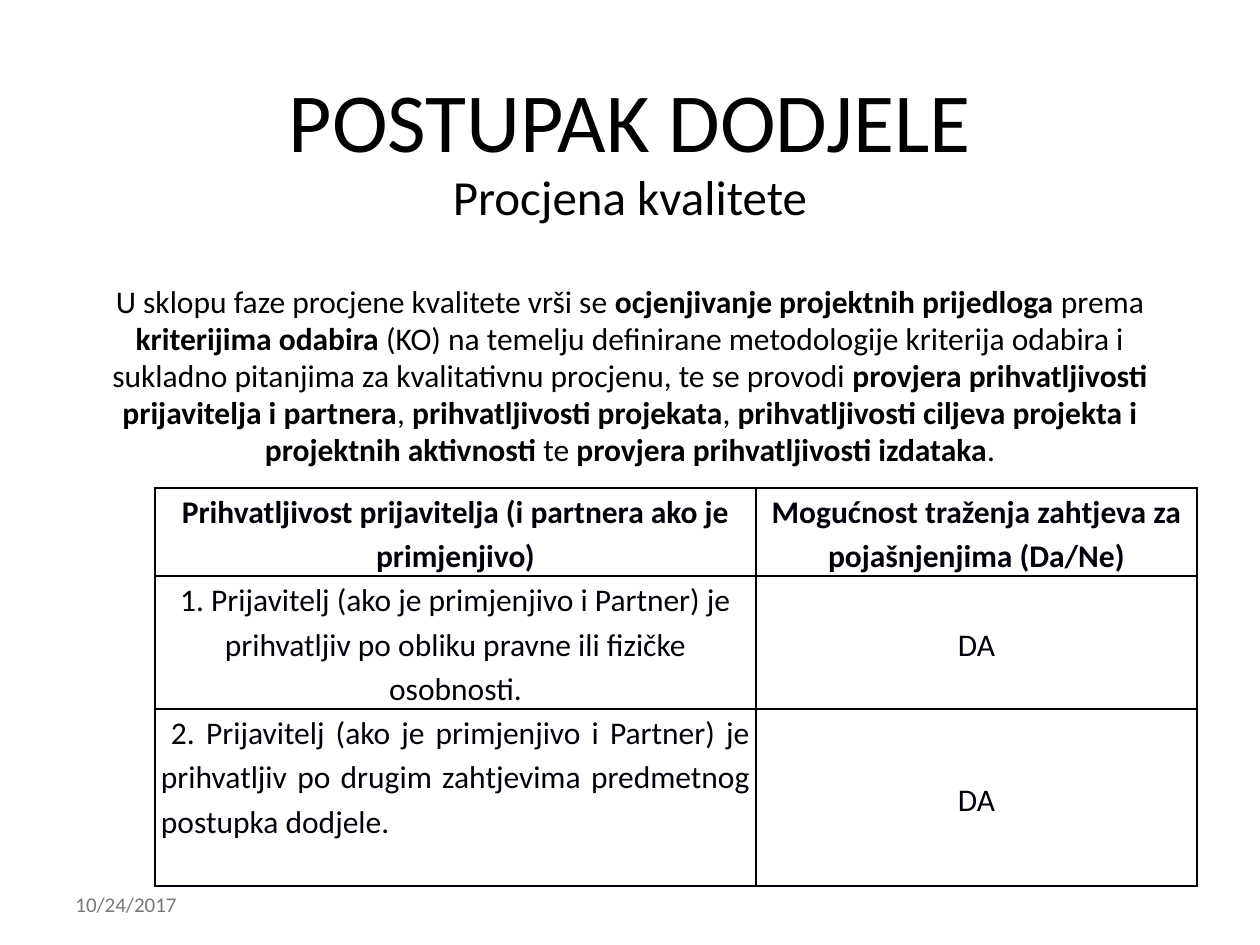
from lxml import etree
from pptx import Presentation
from pptx.dml.color import RGBColor
from pptx.enum import text
from pptx.oxml import ns
from pptx.util import Pt

SCALE = 914400 / 126
MID = text.MSO_ANCHOR.MIDDLE
TOP = text.MSO_ANCHOR.TOP
LEFT, CENTER, JUST = text.PP_ALIGN.LEFT, text.PP_ALIGN.CENTER, text.PP_ALIGN.JUSTIFY


def px(n):
    return round(n * SCALE)


def color(code):
    return RGBColor.from_string(code)


class Deck:
    font = "Calibri"
    ink = "000000"
    grid = "00000A"

    def __init__(self, wide, high):
        self.prs = Presentation()
        self.prs.slide_width, self.prs.slide_height = px(wide), px(high)
        self.slide = self.prs.slides.add_slide(self.prs.slide_layouts[6])

    def words(self, para, parts, size, tint, align, lead=None):
        """Fill a paragraph; every second part is bold."""
        para.alignment = align
        para.line_spacing = lead
        for i, part in enumerate(parts):
            if not part:
                continue
            run = para.add_run()
            run.text = part
            run.font.name, run.font.size = self.font, Pt(size)
            run.font.bold = i % 2 == 1
            run.font.color.rgb = color(tint)

    def label(self, box, parts, size, tint=ink, align=CENTER, anchor=TOP, lead=None):
        frame = self.slide.shapes.add_textbox(*map(px, box)).text_frame
        frame.word_wrap = True
        frame.margin_top = frame.margin_bottom = 0
        frame.vertical_anchor = anchor
        self.words(frame.paragraphs[0], parts, size, tint, align, lead)

    def border(self, cell):
        props = cell._tc.get_or_add_tcPr()
        for i, side in enumerate(("lnL", "lnR", "lnT", "lnB")):
            line = etree.Element(ns.qn("a:" + side), w=str(Pt(1)))
            fill = etree.SubElement(line, ns.qn("a:solidFill"))
            etree.SubElement(fill, ns.qn("a:srgbClr"), val=self.grid)
            props.insert(i, line)

    def table(self, left, top, cols, rows, data):
        grid = self.slide.shapes.add_table(
            len(rows), len(cols), px(left), px(top), px(sum(cols)), px(sum(rows))).table
        for col, wide in zip(grid.columns, cols):
            col.width = px(wide)
        for row, high, line in zip(grid.rows, rows, data):
            row.height = px(high)
            for cell, (parts, align, anchor) in zip(row.cells, line):
                cell.margin_left = cell.margin_right = px(6)
                cell.margin_top = cell.margin_bottom = 0
                cell.vertical_anchor = anchor
                cell.fill.solid()
                cell.fill.fore_color.rgb = color("FFFFFF")
                self.border(cell)
                para = cell.text_frame.paragraphs[0]
                if align == JUST:
                    para._p.get_or_add_pPr().set("indent", str(px(10)))
                self.words(para, parts, 18, self.grid, align, 1.15)


def main():
    deck = Deck(1260, 945)

    # Date
    deck.label((63, 879, 294, 50), ["10/24/2017"], 12, "777877", LEFT, MID)

    # Headings
    deck.label((63, 69, 1134, 102), ["POSTUPAK DODJELE"], 48)
    deck.label((63, 167, 1134, 60), ["Procjena kvalitete"], 28)

    # Introduction
    deck.label((63, 284, 1134, 192), [
        "U sklopu faze procjene kvalitete vrši se ",
        "ocjenjivanje projektnih prijedloga ",
        "prema ",
        "kriterijima odabira ",
        "(KO) na temelju definirane metodologije kriterija odabira i sukladno "
        "pitanjima za kvalitativnu procjenu, te se provodi ",
        "provjera prihvatljivosti prijavitelja i partnera",
        ", ",
        "prihvatljivosti projekata",
        ", ",
        "prihvatljivosti ciljeva projekta i projektnih aktivnosti ",
        "te",
        " provjera prihvatljivosti izdataka",
        ".",
    ], 18, lead=0.98)

    # Criteria table
    yes = (["DA"], CENTER, MID)
    deck.table(155, 488, (601, 441), (88, 133, 177), [
        [(["", "Prihvatljivost prijavitelja (i partnera ako je primjenjivo)"], CENTER, MID),
         (["", "Mogućnost traženja zahtjeva za pojašnjenjima (Da/Ne)"], CENTER, MID)],
        [(["1. Prijavitelj (ako je primjenjivo i Partner) je prihvatljiv po obliku "
           "pravne ili fizičke osobnosti."], CENTER, MID), yes],
        [(["2. Prijavitelj (ako je primjenjivo i Partner) je prihvatljiv po drugim "
           "zahtjevima predmetnog postupka dodjele."], JUST, TOP), yes],
    ])

    deck.prs.save("out.pptx")


if __name__ == "__main__":
    main()
